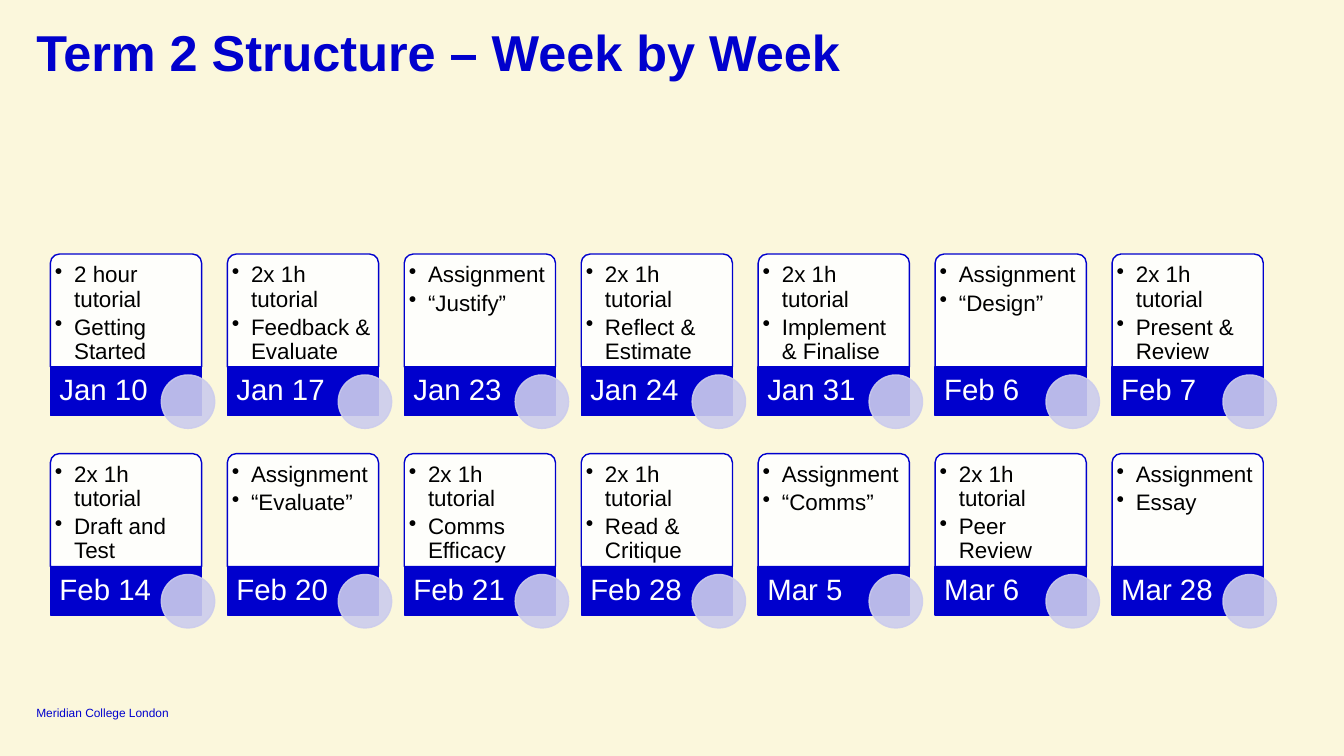
import pptx
import pptx.dml.color
import pptx.enum.shapes
import pptx.enum.text
import pptx.oxml.ns
import pptx.util
import lxml.etree

THEME = {
    "font": "Arial",
    "background": "FBF7DC", "blue": "0000CD", "white": "FFFFFF",
    "black": "000000", "lilac": "CCCCED",
    "title": 36, "date": 21, "body": 16, "footer": 8.5,
}
SHAPES = pptx.enum.shapes.MSO_SHAPE
ANCHOR = pptx.enum.text.MSO_ANCHOR
COLUMNS = 7
LEFT, TOP = 0.5, 2.52
COLUMN_PITCH, ROW_PITCH = (11.03 - LEFT) / (COLUMNS - 1), 1.98
CARD_WIDTH, CARD_HEIGHT, BAND_HEIGHT = 1.5, 1.12, 0.48
INSET = 0.025
CIRCLE = 0.53
BULLET_INDENT = 0.19

WEEKS = [
    ("Jan 10", "2 hour tutorial", "Getting Started"),
    ("Jan 17", "2x 1h tutorial", "Feedback & Evaluate"),
    ("Jan 23", "Assignment", "“Justify”"),
    ("Jan 24", "2x 1h tutorial", "Reflect & Estimate"),
    ("Jan 31", "2x 1h tutorial", "Implement & Finalise"),
    ("Feb 6", "Assignment", "“Design”"),
    ("Feb 7", "2x 1h tutorial", "Present & Review"),
    ("Feb 14", "2x 1h tutorial", "Draft and Test"),
    ("Feb 20", "Assignment", "“Evaluate”"),
    ("Feb 21", "2x 1h tutorial", "Comms Efficacy"),
    ("Feb 28", "2x 1h tutorial", "Read & Critique"),
    ("Mar 5", "Assignment", "“Comms”"),
    ("Mar 6", "2x 1h tutorial", "Peer Review"),
    ("Mar 28", "Assignment", "Essay"),
]

presentation = pptx.Presentation()
presentation.slide_width = pptx.util.Inches(13.33)
presentation.slide_height = pptx.util.Inches(7.5)
slide = presentation.slides.add_slide(presentation.slide_layouts[6])
background = slide.background.fill
background.solid()
background.fore_color.rgb = pptx.dml.color.RGBColor.from_string(THEME["background"])


def add_panel(kind, box, fill, line, see_through=()):
    """Add a filled outline; see_through names the parts ("fill", "line") at 90 % opacity."""
    shape = slide.shapes.add_shape(kind, *map(pptx.util.Inches, box))
    shape.shadow.inherit = False
    shape.line.width = pptx.util.Pt(1)
    shape.fill.solid()
    shape.line.fill.solid()
    for part, paint, colour in (("fill", shape.fill, fill), ("line", shape.line.fill, line)):
        paint.fore_color.rgb = pptx.dml.color.RGBColor.from_string(THEME[colour])
        if part in see_through:
            parent = shape.line._ln if part == "line" else shape._element.spPr
            tint = parent.find(pptx.oxml.ns.qn("a:solidFill"))[0]
            lxml.etree.SubElement(tint, pptx.oxml.ns.qn("a:alpha"), val="90000")
    return shape


def add_text(box, lines, size, colour, anchor=ANCHOR.TOP, insets=(0, 0, 0, 0),
             bold=False, spacing=0.9, after=0, bullets=False):
    frame = slide.shapes.add_textbox(*map(pptx.util.Inches, box)).text_frame
    frame.word_wrap = True
    frame.vertical_anchor = anchor
    (frame.margin_left, frame.margin_top,
     frame.margin_right, frame.margin_bottom) = map(pptx.util.Inches, insets)
    for index, line in enumerate(lines):
        paragraph = frame.add_paragraph() if index else frame.paragraphs[0]
        paragraph.line_spacing = spacing
        paragraph.space_after = pptx.util.Pt(after)
        if bullets:
            paragraph.level = 1
            properties = paragraph._p.get_or_add_pPr()
            indent = pptx.util.Inches(BULLET_INDENT)
            properties.set("marL", str(indent))
            properties.set("indent", str(-indent))
            lxml.etree.SubElement(properties, pptx.oxml.ns.qn("a:buChar"), char="•")
        run = paragraph.add_run()
        run.text = line
        run.font.name = THEME["font"]
        run.font.size = pptx.util.Pt(THEME[size])
        run.font.bold = bold
        run.font.color.rgb = pptx.dml.color.RGBColor.from_string(THEME[colour])


add_text((0.36, 6.99, 1.55, 0.15), ["Meridian College London"], "footer", "blue",
         anchor=ANCHOR.BOTTOM, spacing=1.0)
add_text((0.36, 0.28, 12.62, 0.41), ["Term 2 Structure – Week by Week"], "title", "blue",
         bold=True)

for index, (date, *activities) in enumerate(WEEKS):
    row, column = divmod(index, COLUMNS)
    left = LEFT + column * COLUMN_PITCH
    top = TOP + row * ROW_PITCH
    band_top = top + CARD_HEIGHT

    card = add_panel(SHAPES.ROUND_2_SAME_RECTANGLE, (left, top, CARD_WIDTH, CARD_HEIGHT),
                     "white", "blue", see_through=("fill",))
    card.adjustments[0] = 0.08
    card.adjustments[1] = 0
    add_text((left + INSET, top + INSET, CARD_WIDTH - 2 * INSET, CARD_HEIGHT - INSET),
             activities, "body", "black", insets=(0.02, 0.07, 0.02, 0.02),
             after=2.8, bullets=True)
    add_panel(SHAPES.RECTANGLE, (left, band_top, CARD_WIDTH, BAND_HEIGHT), "blue", "blue")
    add_text((left, band_top, 1.06, BAND_HEIGHT), [date], "date", "white",
             anchor=ANCHOR.MIDDLE, insets=(0.09, 0, 0.03, 0))
    add_panel(SHAPES.OVAL, (left + 1.1, band_top + 0.08, CIRCLE, CIRCLE),
              "lilac", "lilac", see_through=("fill", "line"))

presentation.save("out.pptx")
